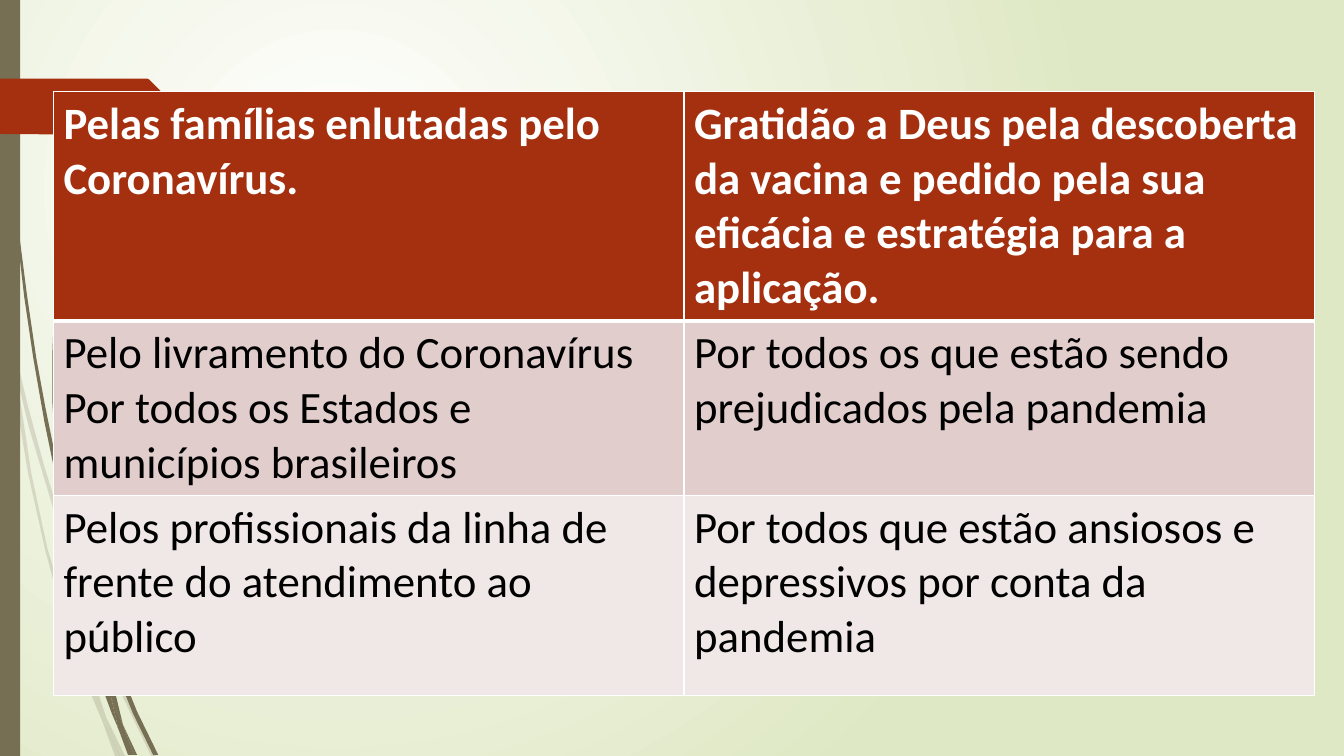
from lxml import etree
from pptx import Presentation
from pptx.dml.color import RGBColor
from pptx.enum.shapes import MSO_SHAPE
from pptx.oxml.ns import qn
from pptx.util import Inches, Pt

RECTANGLE = MSO_SHAPE.RECTANGLE
COLORS = {
    "white": "FFFFFF", "black": "000000", "pale green": "DFE8C4",
    "olive": "766F54", "rust": "A53010", "rose": "E1CDCC", "light rose": "F0E8E7",
}
UNIT = 9144  # outlines are given in hundredths of an inch


def paint(shape, color, opacity=100):
    shape.shadow.inherit = False
    shape.fill.solid()
    shape.fill.fore_color.rgb = RGBColor.from_string(COLORS[color])
    shape.line.fill.background()
    if opacity < 100:
        color_element = shape._element.spPr.find(qn("a:solidFill"))[0]
        etree.SubElement(color_element, qn("a:alpha"), val=str(opacity * 1000))


def add_outline(shapes, points, color, opacity=100):
    builder = shapes.build_freeform(*points[0], scale=UNIT)
    builder.add_line_segments(points[1:], close=True)
    paint(builder.convert_to_shape(), color, opacity)


presentation = Presentation()
presentation.slide_width = Inches(13.33)
presentation.slide_height = Inches(7.5)
slide = presentation.slides.add_slide(presentation.slide_layouts[6])
shapes = slide.shapes

# Background: circular gradient centred in the upper left
background = slide.background.fill
background.gradient()
for stop, position, color in zip(background.gradient_stops, (0, 1), ("white", "pale green")):
    stop.position = position
    stop.color.rgb = RGBColor.from_string(COLORS[color])
gradient = slide._element.cSld.find(".//" + qn("a:gradFill"))
gradient.remove(gradient.find(qn("a:lin")))
circle = etree.SubElement(gradient, qn("a:path"), path="circle")
etree.SubElement(circle, qn("a:fillToRect"), l="50000", t="50000", r="100000", b="100000")

# Grass blades: faint ones behind, solid ones in front
faint_blades = [
    [(14, 345), (28, 404), (44, 463), (62, 520), (85, 586), (84, 599), (58, 522), (29, 425), (17, 376)],
    [(88, 596), (92, 607), (108, 650), (127, 692), (155, 750), (150, 750), (123, 694), (88, 610)],
    [(105, 711), (124, 750), (119, 750)],
    [(11, 350), (17, 376), (31, 469), (47, 544), (70, 619), (93, 683), (99, 707), (101, 714),
     (92, 693), (65, 621), (45, 546), (28, 470), (18, 410)],
    [(84, 599), (88, 610), (91, 646), (97, 686), (105, 711), (96, 692), (93, 683), (87, 646)],
    [(101, 714), (119, 750), (114, 750)],
    [(93, 683), (96, 692), (105, 711), (119, 750), (101, 714), (99, 707)],
]
solid_blades = [
    [(3, 0), (4, 0), (5, 48), (8, 109), (13, 171), (19, 232), (27, 294), (36, 355), (45, 404),
     (55, 453), (57, 481), (44, 418), (33, 355), (24, 294), (17, 233), (11, 171), (7, 110), (4, 48)],
    [(110, 641), (113, 649), (136, 706), (157, 749), (152, 749), (132, 708), (111, 656)],
    [(57, 477), (64, 505), (72, 556), (84, 608), (98, 657), (110, 691), (116, 717), (117, 722),
     (111, 708), (93, 659), (79, 608), (68, 557)],
    [(70, 141), (63, 193), (58, 245), (54, 349), (58, 453), (60, 472), (55, 449), (52, 400),
     (52, 349), (56, 245), (62, 193)],
    [(122, 719), (136, 749), (133, 749)],
    [(117, 722), (131, 749), (127, 749)],
    [(106, 645), (111, 656), (115, 690), (122, 719), (116, 706), (110, 691)],
    [(110, 691), (116, 706), (122, 719), (133, 749), (130, 749), (117, 722), (116, 717)],
]
for blades, opacity in ((faint_blades, 20), (solid_blades, 100)):
    for blade in blades:
        add_outline(shapes, blade, "olive", opacity)

# Left bar and arrow tab
side_bar = shapes.add_shape(RECTANGLE, 0, 0, Inches(0.2), presentation.slide_height)
paint(side_bar, "olive")
arrow_tab = [(0, 78), (146, 78), (148, 79), (173, 104), (174, 106), (173, 108),
             (148, 133), (146, 134), (0, 133)]
add_outline(shapes, arrow_tab, "rust")

# Prayer table: fill, text colour, row height, texts
prayer_rows = [
    ("rust", "white", 2.27, ("Pelas famílias enlutadas pelo Coronavírus.",
                             "Gratidão a Deus pela descoberta da vacina e pedido pela sua "
                             "eficácia e estratégia para a aplicação.")),
    ("rose", "black", 1.73, ("Pelo livramento do Coronavírus Por todos os Estados e "
                             "municípios brasileiros",
                             "Por todos os que estão sendo prejudicados pela pandemia")),
    ("light rose", "black", 1.99, ("Pelos profissionais da linha de frente do atendimento ao público",
                                   "Por todos que estão ansiosos e depressivos por conta da pandemia")),
]
table = shapes.add_table(len(prayer_rows), 2, Inches(0.53), Inches(0.91),
                         Inches(12.51), Inches(5.99)).table
for row_index, (fill, text_color, height, texts) in enumerate(prayer_rows):
    table.rows[row_index].height = Inches(height)
    is_header = row_index == 0
    for column_index, text in enumerate(texts):
        cell = table.cell(row_index, column_index)
        run = cell.text_frame.paragraphs[0].add_run()
        run.text = text
        run.font.name = "Calibri"
        run.font.size = Pt(32)
        run.font.bold = is_header
        run.font.color.rgb = RGBColor.from_string(COLORS[text_color])
        # White borders, with a thick rule under the header
        properties = cell._tc.get_or_add_tcPr()
        for side in "LRTB":
            thick = (is_header and side == "B") or (row_index == 1 and side == "T")
            border = etree.SubElement(properties, qn("a:ln" + side), w=str(Pt(3 if thick else 1)))
            border_fill = etree.SubElement(border, qn("a:solidFill"))
            etree.SubElement(border_fill, qn("a:srgbClr"), val=COLORS["white"])
        cell.fill.solid()
        cell.fill.fore_color.rgb = RGBColor.from_string(COLORS[fill])

presentation.save("out.pptx")
